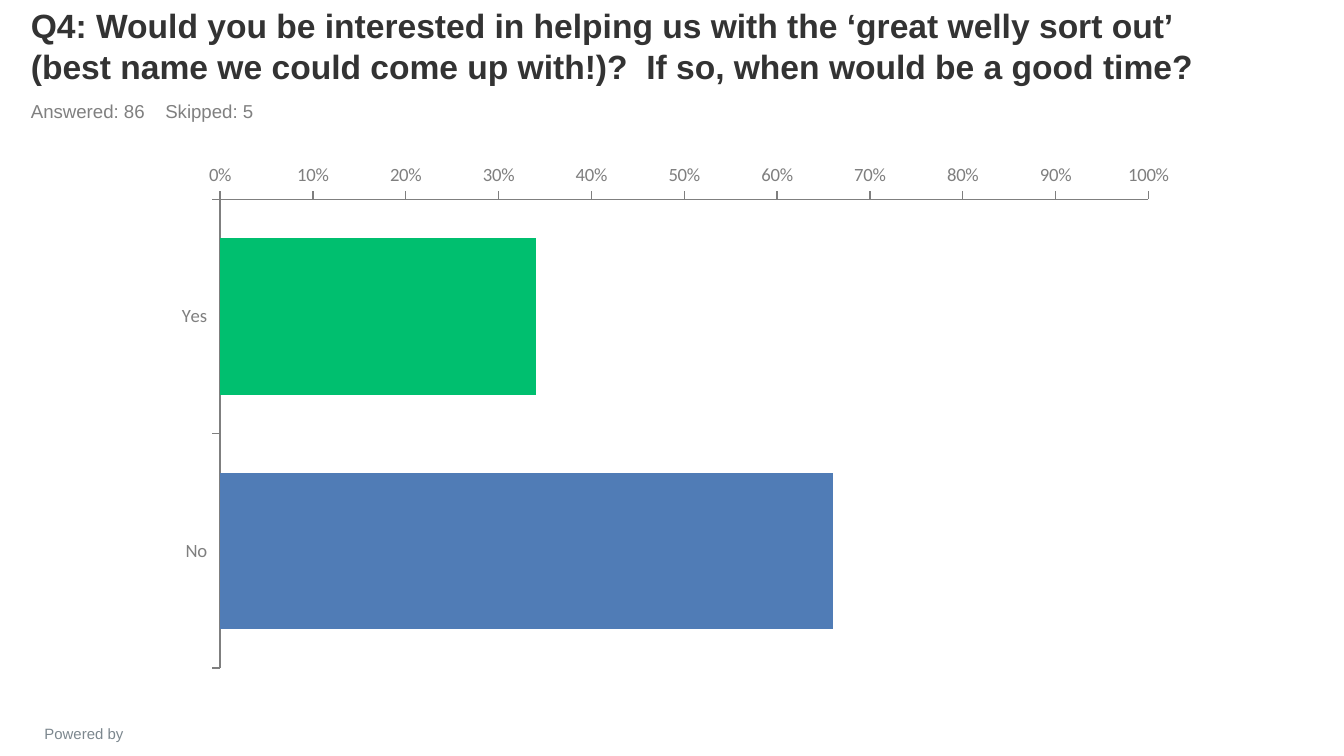
from dataclasses import dataclass

from lxml.etree import SubElement
from pptx import Presentation
from pptx.chart.data import CategoryChartData
from pptx.dml.color import RGBColor
from pptx.enum.chart import XL_AXIS_CROSSES, XL_CHART_TYPE, XL_TICK_LABEL_POSITION, XL_TICK_MARK
from pptx.enum.text import MSO_ANCHOR, MSO_AUTO_SIZE, PP_ALIGN
from pptx.oxml.ns import qn
from pptx.util import Pt


@dataclass(frozen=True)
class Theme:
    text_font: str = "Arial"
    chart_font: str = "Calibri"
    title_color: RGBColor = RGBColor(0x33, 0x33, 0x33)
    summary_color: RGBColor = RGBColor(0x80, 0x80, 0x80)
    footer_color: RGBColor = RGBColor(0x7C, 0x87, 0x8E)
    axis_color: RGBColor = RGBColor(0x7F, 0x7F, 0x7F)
    bar_colors: tuple = (RGBColor(0x00, 0xBF, 0x6F), RGBColor(0x50, 0x7C, 0xB6))
    title_size: Pt = Pt(18)
    summary_size: Pt = Pt(10)
    footer_size: Pt = Pt(8)
    chart_size: Pt = Pt(18)
    axis_size: Pt = Pt(10)


THEME = Theme()


def set_attributes(target, values):
    for name, value in values.items():
        setattr(target, name, value)


def set_font(font, color, **values):
    set_attributes(font, values)
    font.color.rgb = color


def place(shape, box):
    set_attributes(shape, dict(zip(("left", "top", "width", "height"), box)))


def fill_text(shape, text, anchor, alignment):
    set_attributes(shape.text_frame, {
        "text": text,
        "word_wrap": True,
        "auto_size": MSO_AUTO_SIZE.NONE,
        "vertical_anchor": anchor,
    })
    paragraph = shape.text_frame.paragraphs[0]
    set_attributes(paragraph, {"alignment": alignment, "space_before": Pt(0)})
    return paragraph


def add_title(slide, box, text):
    place(slide.shapes.title, box)
    paragraph = fill_text(slide.shapes.title, text, MSO_ANCHOR.BOTTOM, PP_ALIGN.LEFT)
    set_font(paragraph.font, THEME.title_color, name=THEME.text_font,
             size=THEME.title_size, bold=True)


def add_summary(slide, box, text, tab_position):
    shape = slide.placeholders[1]
    place(shape, box)
    paragraph = fill_text(shape, text, MSO_ANCHOR.TOP, PP_ALIGN.LEFT)
    properties = paragraph._p.get_or_add_pPr()
    properties.set("marL", "0")
    properties.set("indent", "0")
    SubElement(properties, qn("a:buNone"))
    tabs = SubElement(properties, qn("a:tabLst"))
    SubElement(tabs, qn("a:tab"), pos=str(tab_position), algn="l")
    set_font(paragraph.font, THEME.summary_color, name=THEME.text_font, size=THEME.summary_size)


def add_footer(slide, box, text):
    shape = slide.shapes.add_textbox(*box)
    paragraph = fill_text(shape, text, MSO_ANCHOR.TOP, PP_ALIGN.CENTER)
    set_font(paragraph.font, THEME.footer_color, name=THEME.text_font, size=THEME.footer_size)


def format_axis(axis, values):
    set_attributes(axis, {
        "has_major_gridlines": False,
        "major_tick_mark": XL_TICK_MARK.OUTSIDE,
        "minor_tick_mark": XL_TICK_MARK.NONE,
        **values,
    })
    axis.format.line.width = Pt(0.75)
    axis.format.line.color.rgb = THEME.axis_color
    set_font(axis.tick_labels.font, THEME.axis_color, name=THEME.chart_font, size=THEME.axis_size)


def add_answer_chart(slide, box, answers):
    data = CategoryChartData(number_format="0%")
    data.categories = answers.keys()
    data.add_series("Series 1", answers.values())
    chart = slide.shapes.add_chart(XL_CHART_TYPE.BAR_CLUSTERED, *box, data).chart
    set_attributes(chart, {"has_legend": False, "has_title": False})
    set_font(chart.font, THEME.title_color, name=THEME.chart_font, size=THEME.chart_size)

    format_axis(chart.category_axis, {
        "reverse_order": True,
        "crosses": XL_AXIS_CROSSES.MAXIMUM,
        "tick_label_position": XL_TICK_LABEL_POSITION.LOW,
    })
    format_axis(chart.value_axis, {"minimum_scale": 0, "maximum_scale": 1, "major_unit": 0.1})
    set_attributes(chart.value_axis.tick_labels,
                   {"number_format": "0%", "number_format_is_linked": False})

    plot = chart.plots[0]
    set_attributes(plot, {"gap_width": 50, "overlap": 100, "vary_by_categories": False})
    series = plot.series[0]
    series.invert_if_negative = False
    for index, color in enumerate(THEME.bar_colors):
        fill = series.points[index].format.fill
        fill.solid()
        fill.fore_color.rgb = color


def add_question_slide(presentation):
    slide = presentation.slides.add_slide(presentation.slide_layouts[1])
    left, width = Pt(9.36), Pt(648)
    add_footer(slide, (Pt(3.6), Pt(384.5), Pt(82.8), Pt(13)), "Powered by")
    add_title(slide, (left, Pt(6.5), width, Pt(43.2)),
              "Q4: Would you be interested in helping us with the ‘great welly sort out’ "
              "(best name we could come up with!)?  If so, when would be a good time?")
    add_summary(slide, (left, Pt(49.7), width, Pt(18.7)),
                "Answered: 86\tSkipped: 5", Pt(69.5))
    add_answer_chart(slide, (Pt(86.4), Pt(82.8), Pt(550.8), Pt(280.8)),
                     {"Yes": 0.34, "No": 0.66})


def main():
    presentation = Presentation()
    set_attributes(presentation, {"slide_width": Pt(720), "slide_height": Pt(405)})
    add_question_slide(presentation)
    presentation.save("out.pptx")


if __name__ == "__main__":
    main()
